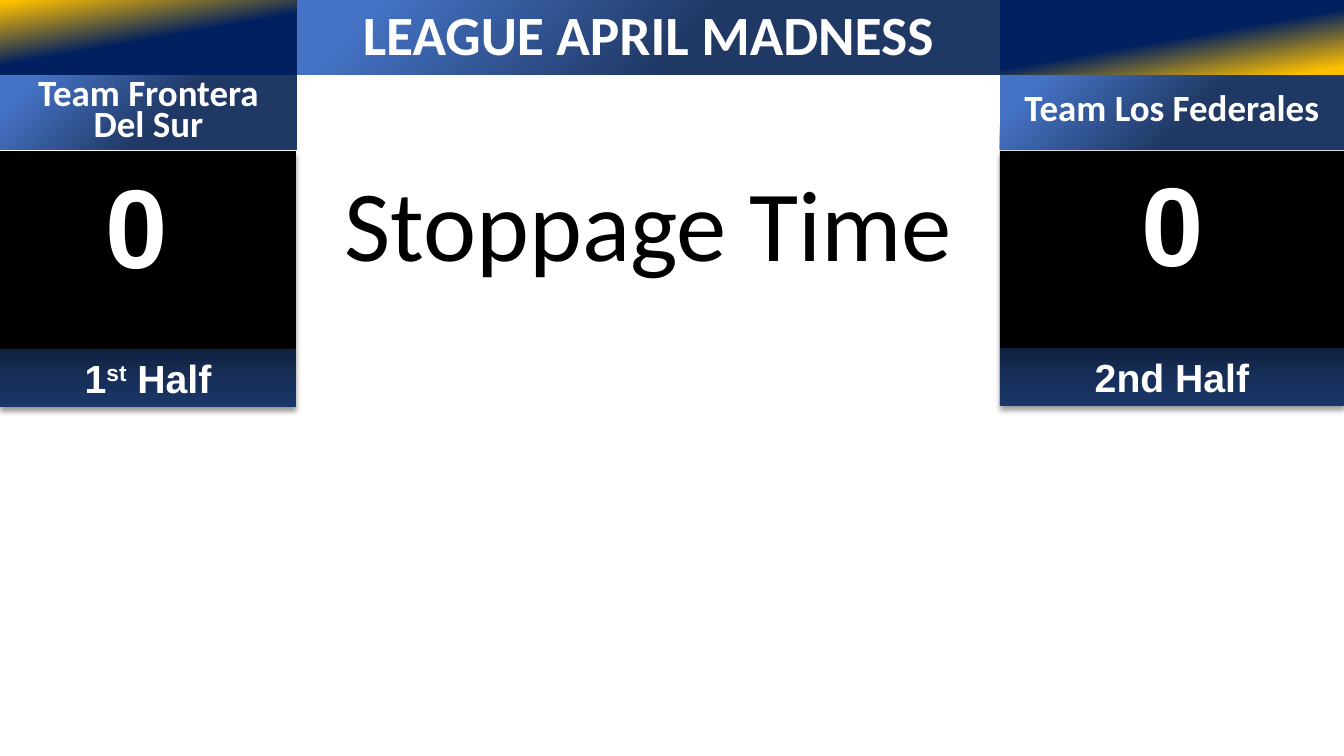
from lxml.etree import SubElement
from pptx import Presentation
from pptx.dml.color import RGBColor
from pptx.enum.shapes import MSO_SHAPE
from pptx.enum.text import MSO_ANCHOR, PP_ALIGN
from pptx.oxml.ns import qn
from pptx.util import Emu, Pt

PX = 914400 / 100.8
WHITE = RGBColor(0xFF, 0xFF, 0xFF)
BLACK = RGBColor(0x00, 0x00, 0x00)
BLUE = RGBColor(0x44, 0x72, 0xC4)
DARK_BLUE = RGBColor(0x20, 0x38, 0x64)
NAVY = RGBColor(0x00, 0x20, 0x60)
GOLD = RGBColor(0xFF, 0xC0, 0x00)
BANNER = [(11, BLUE), (56, DARK_BLUE)]
HALF_BAND = [
    (0, RGBColor(0x10, 0x21, 0x3F)),
    (50, RGBColor(0x16, 0x2E, 0x59)),
    (100, RGBColor(0x1B, 0x37, 0x69)),
]


def add_panel(left, top, width, height, stops, angle=0):
    """Add a borderless rectangle; stops are (percent, colour), angle is clockwise."""
    shape = slide.shapes.add_shape(
        MSO_SHAPE.RECTANGLE, *(Emu(round(n * PX)) for n in (left, top, width, height)))
    shape.shadow.inherit = False
    shape.line.fill.background()
    if not stops:
        shape.fill.background()
    elif len(stops) == 1:
        shape.fill.solid()
        shape.fill.fore_color.rgb = stops[0][1]
    else:
        shape.fill.gradient()
        shape.fill.gradient_angle = 360 - angle
        stop_list = shape._element.spPr.find(qn("a:gradFill")).find(qn("a:gsLst"))
        stop_list.clear()
        for percent, color in stops:
            stop = SubElement(stop_list, qn("a:gs"), pos=str(percent * 1000))
            SubElement(stop, qn("a:srgbClr"), val=str(color))
    return shape


def write(shape, parts, size, font_name, color=WHITE, bold=True,
          anchor=MSO_ANCHOR.TOP, spacing=1.0):
    """Write one centred paragraph, one run for each part."""
    frame = shape.text_frame
    frame.word_wrap = True
    frame.vertical_anchor = anchor
    paragraph = frame.paragraphs[0]
    paragraph.alignment = PP_ALIGN.CENTER
    paragraph.line_spacing = spacing
    font = paragraph.font
    font.size, font.name, font.bold = Pt(size), font_name, bold
    font.color.rgb = color
    for part in parts:
        paragraph.add_run().text = part
    return paragraph


presentation = Presentation()
presentation.slide_width = Emu(round(1344 * PX))
presentation.slide_height = Emu(round(756 * PX))
slide = presentation.slides.add_slide(presentation.slide_layouts[6])

# Team names
teams = [(0, 297, "Team Frontera Del Sur"), (1000, 344, "Team Los Federales")]
for left, width, team in teams:
    name_panel = add_panel(left, 75, width, 75, BANNER, 45)
    write(name_panel, [team], 26.4, "Calibri", anchor=MSO_ANCHOR.MIDDLE, spacing=0.7)

# Header
add_panel(0, 0, 517, 75, [(2, GOLD), (40, NAVY)], 80)
add_panel(827, 0, 517, 75, [(60, NAVY), (95, GOLD)], 80)
title = add_panel(297, 0, 703, 75, BANNER, 45)
write(title, ["LEAGUE APRIL MADNESS"], 39.6, "Calibri",
      anchor=MSO_ANCHOR.MIDDLE, spacing=0.9)

# Scoreboards
scoreboards = [
    (0, 296, 256, 38, 152, 349, ["1", "st", " Half"]),
    (1000, 344, 255, 1074, 150, 348, ["2nd Half"]),
]
for left, width, height, score_left, score_top, half_top, half in scoreboards:
    board = add_panel(left, 151, width, height, [(0, BLACK)])
    effects = board._element.spPr.find(qn("a:effectLst"))
    shadow = SubElement(effects, qn("a:outerShdw"), blurRad=str(Pt(4)), dist=str(Pt(3)),
                        dir="5400000", algn="t", rotWithShape="0")
    shadow_color = SubElement(shadow, qn("a:srgbClr"), val=str(BLACK))
    SubElement(shadow_color, qn("a:alpha"), val="40000")

    write(add_panel(score_left, score_top, 197, 146, []), ["0"], 80, "Arial")
    half_label = write(add_panel(left, half_top, width, 58, HALF_BAND, 90),
                       half, 28, "Arial")
    for run in half_label.runs:
        if run.text == "st":
            run.font._element.set("baseline", "30000")

# Status
status = add_panel(297, 189, 703, 156, [])
write(status, ["Stoppage Time"], 71.9, "Calibri", BLACK, bold=False, spacing=0.7)

presentation.save("out.pptx")
